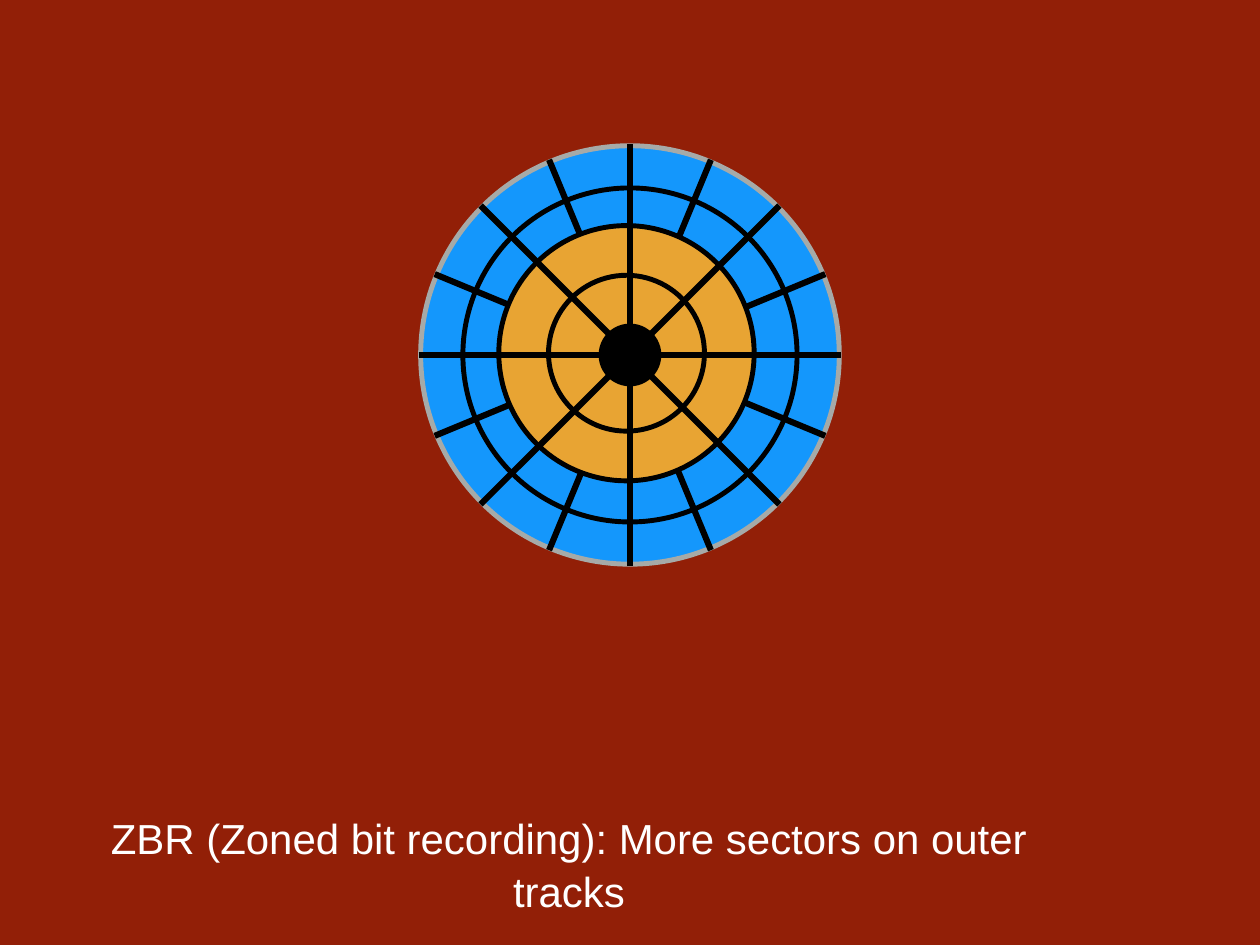
from math import cos, radians, sin

from lxml.etree import SubElement
from pptx import Presentation
from pptx.dml.color import RGBColor
from pptx.enum.shapes import MSO_CONNECTOR as LINK, MSO_SHAPE as SHAPE
from pptx.enum.text import MSO_ANCHOR as ANCHOR, MSO_AUTO_SIZE as FIT, PP_ALIGN as ALIGN
from pptx.oxml.ns import qn
from pptx.util import Cm, Pt

RED = RGBColor(0x92, 0x1F, 0x07)
BLUE = RGBColor(0x14, 0x97, 0xFC)
GOLD = RGBColor(0xE8, 0xA4, 0x33)
GREY = RGBColor(0xA6, 0xAA, 0xA8)
BLACK = RGBColor(0, 0, 0)
WHITE = RGBColor(255, 255, 255)

# Content, lengths in cm
TEXT = "ZBR (Zoned bit recording): More sectors on outer tracks"
MID = (18.06, 10.18)
INNER = (17.96, 10.13)
# centre, diameter, fill, line
OUTER_ZONE = [(MID, 12, BLUE, GREY), (MID, 9.58, BLUE, BLACK)]
INNER_ZONE = [(INNER, 7.32, GOLD, BLACK), (INNER, 4.47, GOLD, BLACK)]
HUB = [(MID, 1.8, BLACK, None)]
REACH = 6.06
OUTER_CUTS = [22.5 + 45 * i for i in range(4)]
FULL_CUTS = [45 * i for i in range(4)]


def add_rings(group, rings):
    for (x, y), size, fill, edge in rings:
        ring = group.shapes.add_shape(
            SHAPE.OVAL, Cm(x - size / 2), Cm(y - size / 2), Cm(size), Cm(size))
        ring.shadow.inherit = False
        ring.fill.solid()
        ring.fill.fore_color.rgb = fill
        if edge is None:
            ring.line.fill.background()
        else:
            ring.line.color.rgb = edge
            ring.line.width = Pt(4)


def add_cuts(group, angles):
    x, y = MID
    for angle in angles:
        dx = REACH * cos(radians(angle))
        dy = REACH * sin(radians(angle))
        cut = group.shapes.add_connector(
            LINK.STRAIGHT, Cm(x - dx), Cm(y + dy), Cm(x + dx), Cm(y - dy))
        cut.line.color.rgb = BLACK
        cut.line.width = Pt(5)
        SubElement(cut.element.spPr, qn("a:effectLst"))


def add_caption(slide):
    box = slide.shapes.add_textbox(Cm(2.9), Cm(23.09), Cm(26.82), Cm(1.73))
    frame = box.text_frame
    frame.text = TEXT
    frame.word_wrap = True
    frame.auto_size = FIT.SHAPE_TO_FIT_TEXT
    frame.vertical_anchor = ANCHOR.TOP
    frame.margin_left = frame.margin_right = Cm(0.13)
    frame.margin_top = frame.margin_bottom = Cm(0.13)
    para = frame.paragraphs[0]
    para.alignment = ALIGN.CENTER
    para.line_spacing = 1.06
    font = para.runs[0].font
    font.name = "Arial"
    font.size = Pt(34.1)
    font.color.rgb = WHITE


def main():
    deck = Presentation()
    deck.slide_width, deck.slide_height = Cm(36.12), Cm(27.1)
    slide = deck.slides.add_slide(deck.slide_layouts[6])
    slide.background.fill.solid()
    slide.background.fill.fore_color.rgb = RED

    # Disk, from back to front: the inner zone covers the extra outer cuts
    disk = slide.shapes.add_group_shape()
    add_rings(disk, OUTER_ZONE)
    add_cuts(disk, OUTER_CUTS)
    add_rings(disk, INNER_ZONE + HUB)
    add_cuts(disk, FULL_CUTS)

    add_caption(slide)
    deck.save("out.pptx")


if __name__ == "__main__":
    main()
